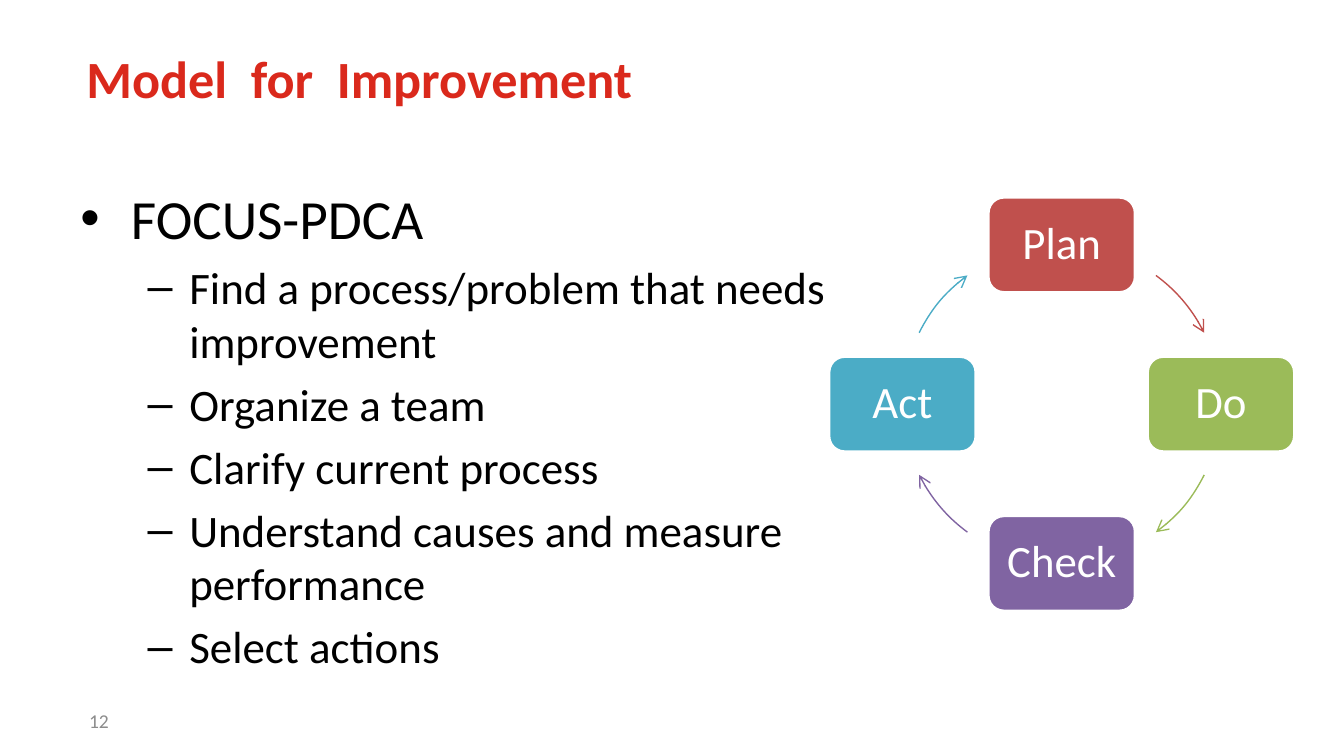
from dataclasses import dataclass

from lxml import etree
from pptx import Presentation
from pptx import util as u
from pptx.dml.color import RGBColor
from pptx.enum import shapes, text
from pptx.oxml.ns import qn

PX = 4572  # 200 px to the inch
FONT = "Calibri"
WHITE = "FFFFFF"

# Cycle geometry
MID_X, MID_Y, RING = 1580, 601, 237
NODE_W, NODE_H = 220, 143


@dataclass(frozen=True)
class Step:
    name: str
    hue: str
    dx: int
    dy: int
    start: float  # degrees clockwise from the right
    end: float


@dataclass(frozen=True)
class Level:
    mark: str
    left: int
    hang: int
    size: float


STEPS = [
    Step("Plan", "C0504D", 0, -1, 306.3, 333.5),
    Step("Do", "9BBB59", 1, 0, 26.5, 53.7),
    Step("Check", "8064A2", 0, 1, 126.3, 153.5),
    Step("Act", "4BACC6", -1, 0, 206.5, 233.7),
]
TOP = Level("•", 75, 75, 29.6)
SUB = Level("–", 162, 62, 24.1)
ITEMS = [
    (TOP, "FOCUS-PDCA"),
    (SUB, "Find a process/problem that needs improvement"),
    (SUB, "Organize a team"),
    (SUB, "Clarify current process"),
    (SUB, "Understand causes and measure performance"),
    (SUB, "Select actions"),
]


def px(n: int) -> u.Emu:
    return u.Emu(n * PX)


def rgb(code: str) -> RGBColor:
    return RGBColor.from_string(code)


def add_run(para, words: str, size: float, hue: str, bold: bool = False) -> None:
    run = para.add_run()
    run.text = words
    font = run.font
    font.name, font.size, font.bold = FONT, u.Pt(size), bold
    font.color.rgb = rgb(hue)


def add_box(slide, x: int, y: int, w: int, h: int):
    """Add a wrapping text box and return its frame."""
    frame = slide.shapes.add_textbox(px(x), px(y), px(w), px(h)).text_frame
    frame.word_wrap = True
    return frame


def add_mark(para, level: Level) -> None:
    """Give a paragraph its bullet and hanging indent."""
    props = para._p.get_or_add_pPr()
    props.set("marL", str(px(level.left)))
    props.set("indent", str(-px(level.hang)))
    etree.SubElement(props, qn("a:buFont"), typeface="Arial")
    etree.SubElement(props, qn("a:buChar"), char=level.mark)


def add_list(slide) -> None:
    frame = add_box(slide, 100, 262, 1316, 742)
    frame.margin_top = px(12)
    for i, (level, words) in enumerate(ITEMS):
        para = frame.add_paragraph() if i else frame.paragraphs[0]
        add_mark(para, level)
        if level is SUB:
            para.level = 1
            para.space_before = u.Pt(4.8)
        add_run(para, words, level.size, "000000")


def add_node(slide, step: Step) -> None:
    x = MID_X + step.dx * RING - NODE_W // 2
    y = MID_Y + step.dy * RING - NODE_H // 2
    node = slide.shapes.add_shape(
        shapes.MSO_SHAPE.ROUNDED_RECTANGLE, px(x), px(y), px(NODE_W), px(NODE_H))
    node.shadow.inherit = False
    node.fill.solid()
    node.fill.fore_color.rgb = rgb(step.hue)
    node.line.color.rgb = rgb(WHITE)
    node.line.width = u.Pt(2)
    frame = node.text_frame
    frame.margin_left = frame.margin_right = px(16)
    frame.vertical_anchor = text.MSO_ANCHOR.MIDDLE
    para = frame.paragraphs[0]
    para.alignment = text.PP_ALIGN.CENTER
    para.line_spacing = 0.9
    add_run(para, step.name, 24, WHITE)


def add_arc(slide, step: Step) -> None:
    """Draw the arrow that leads from a step to the next one."""
    arc = slide.shapes.add_shape(
        shapes.MSO_SHAPE.ARC, px(MID_X - RING), px(MID_Y - RING),
        px(2 * RING), px(2 * RING))
    arc.shadow.inherit = False
    # Angles are stored in 60000ths of a degree, adjustments in 100000ths
    arc.adjustments[0] = step.start * 0.6
    arc.adjustments[1] = step.end * 0.6
    arc.fill.background()
    arc.line.color.rgb = rgb(step.hue)
    arc.line.width = u.Pt(0.75)
    etree.SubElement(arc.line._get_or_add_ln(), qn("a:tailEnd"), type="arrow")


def main() -> None:
    deck = Presentation()
    deck.slide_width, deck.slide_height = px(2000), px(1125)
    slide = deck.slides.add_slide(deck.slide_layouts[6])

    title = add_box(slide, 109, 59, 1800, 110)
    add_run(title.paragraphs[0], "Model  for  Improvement", 28, "DA291C", True)

    number = add_box(slide, 113, 1043, 466, 60)
    number.vertical_anchor = text.MSO_ANCHOR.MIDDLE
    add_run(number.paragraphs[0], "12", 10.5, "8C8C8C")

    add_list(slide)
    for step in STEPS:
        add_node(slide, step)
        add_arc(slide, step)
    deck.save("out.pptx")


if __name__ == "__main__":
    main()
